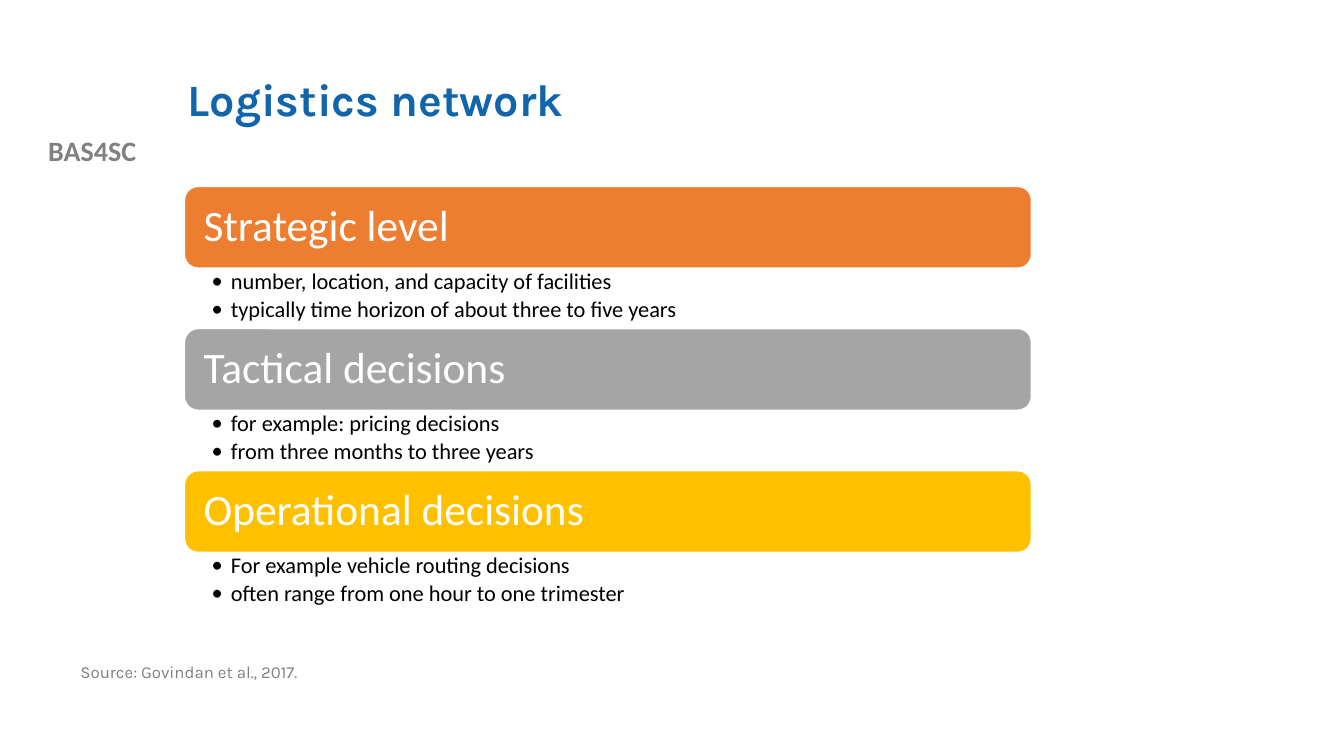
from lxml import etree
from pptx import Presentation, util as u
from pptx.dml.color import RGBColor
from pptx.enum import shapes, text
from pptx.oxml.ns import qn

PX = 9144
COLORS = {"blue": "1065AB", "grey": "808080", "white": "FFFFFF", "black": "000000",
          "orange": "ED7D31", "silver": "A5A5A5", "gold": "FFC000"}
LEVELS = [
    ("Strategic level", "orange",
     ["number, location, and capacity of facilities",
      "typically time horizon of about three to five years"]),
    ("Tactical decisions", "silver",
     ["for example: pricing decisions", "from three months to three years"]),
    ("Operational decisions", "gold",
     ["For example vehicle routing decisions",
      "often range from one hour to one trimester"]),
]
LEFT, TOP, WIDTH, BAR_H, LIST_H = 183, 185, 840, 81, 60


class Deck:
    """Holds the style and the current slide, with a method per kind of element."""

    def __init__(self, prs, layout):
        self.slide = prs.slides.add_slide(prs.slide_layouts[layout])

    def color(self, name):
        return RGBColor.from_string(COLORS[name])

    def place(self, sp, box):
        sp.left, sp.top, sp.width, sp.height = (n * PX for n in box)

    def frame(self, sp, anchor, insets=(10, 5, 10, 5)):
        tf = sp.text_frame
        tf.word_wrap = True
        tf.auto_size = text.MSO_AUTO_SIZE.NONE
        tf.vertical_anchor = anchor
        tf.margin_left, tf.margin_top, tf.margin_right, tf.margin_bottom = (
            n * PX for n in insets)
        return tf

    def add_text(self, p, words, size, color, font="Calibri", bold=False,
                 align=text.PP_ALIGN.LEFT, spacing=0.9):
        p.alignment = align
        p.line_spacing = spacing
        p.space_before = u.Pt(0)
        r = p.add_run()
        r.text = words
        r.font.size = u.Pt(size)
        r.font.name = font
        r.font.bold = bold
        r.font.color.rgb = self.color(color)

    def title(self, words, box):
        sp = self.slide.shapes.title
        self.place(sp, box)
        tf = self.frame(sp, text.MSO_ANCHOR.MIDDLE)
        self.add_text(tf.paragraphs[0], words, 32, "blue", "Karla", True)

    def label(self, words, box, size, **style):
        sp = self.slide.shapes.add_textbox(0, 0, 0, 0)
        self.place(sp, box)
        tf = self.frame(sp, text.MSO_ANCHOR.TOP)
        self.add_text(tf.paragraphs[0], words, size, "grey", spacing=1.0, **style)

    def bar(self, words, fill, box):
        sp = self.slide.shapes.add_shape(shapes.MSO_SHAPE.ROUNDED_RECTANGLE, 0, 0, 0, 0)
        self.place(sp, box)
        sp.shadow.inherit = False
        sp.fill.solid()
        sp.fill.fore_color.rgb = self.color(fill)
        sp.line.color.rgb = self.color("white")
        sp.line.width = u.Pt(1)
        tf = self.frame(sp, text.MSO_ANCHOR.MIDDLE, (15, 13, 15, 13))
        self.add_text(tf.paragraphs[0], words, 31, "white")

    def bullets(self, idx, items, box):
        sp = self.slide.placeholders[idx]
        self.place(sp, box)
        tf = self.frame(sp, text.MSO_ANCHOR.TOP, (27, 2, 12, 2))
        for i, item in enumerate(items):
            p = tf.add_paragraph() if i else tf.paragraphs[0]
            p.level = 1
            pPr = p._p.get_or_add_pPr()
            pPr.set("marL", str(19 * PX))
            pPr.set("indent", str(-19 * PX))
            etree.SubElement(pPr, qn("a:buFont")).set("typeface", "Calibri")
            etree.SubElement(pPr, qn("a:buChar")).set("char", "•")
            self.add_text(p, item, 16, "black")
            p.space_after = u.Pt(2.5)

    def drop_empty(self):
        for sp in list(self.slide.placeholders):
            if not sp.text_frame.text:
                sp._element.getparent().remove(sp._element)


def main():
    prs = Presentation()
    prs.slide_width, prs.slide_height = 1333 * PX, 750 * PX
    deck = Deck(prs, 4)
    deck.label("BAS4SC", (0, 128, 183, 44), 20, bold=True, align=text.PP_ALIGN.CENTER)
    deck.title("Logistics network", (176, 40, 1066, 122))
    deck.label("Source: Govindan et al., 2017.", (70, 652, 667, 30), 12, font="Karla")
    for i, (heading, fill, items) in enumerate(LEVELS):
        top = TOP + i * (BAR_H + LIST_H)
        deck.bar(heading, fill, (LEFT, top, WIDTH, BAR_H))
        deck.bullets(i + 1, items, (LEFT, top + BAR_H, WIDTH, LIST_H))
    deck.drop_empty()
    prs.save("out.pptx")


if __name__ == "__main__":
    main()
